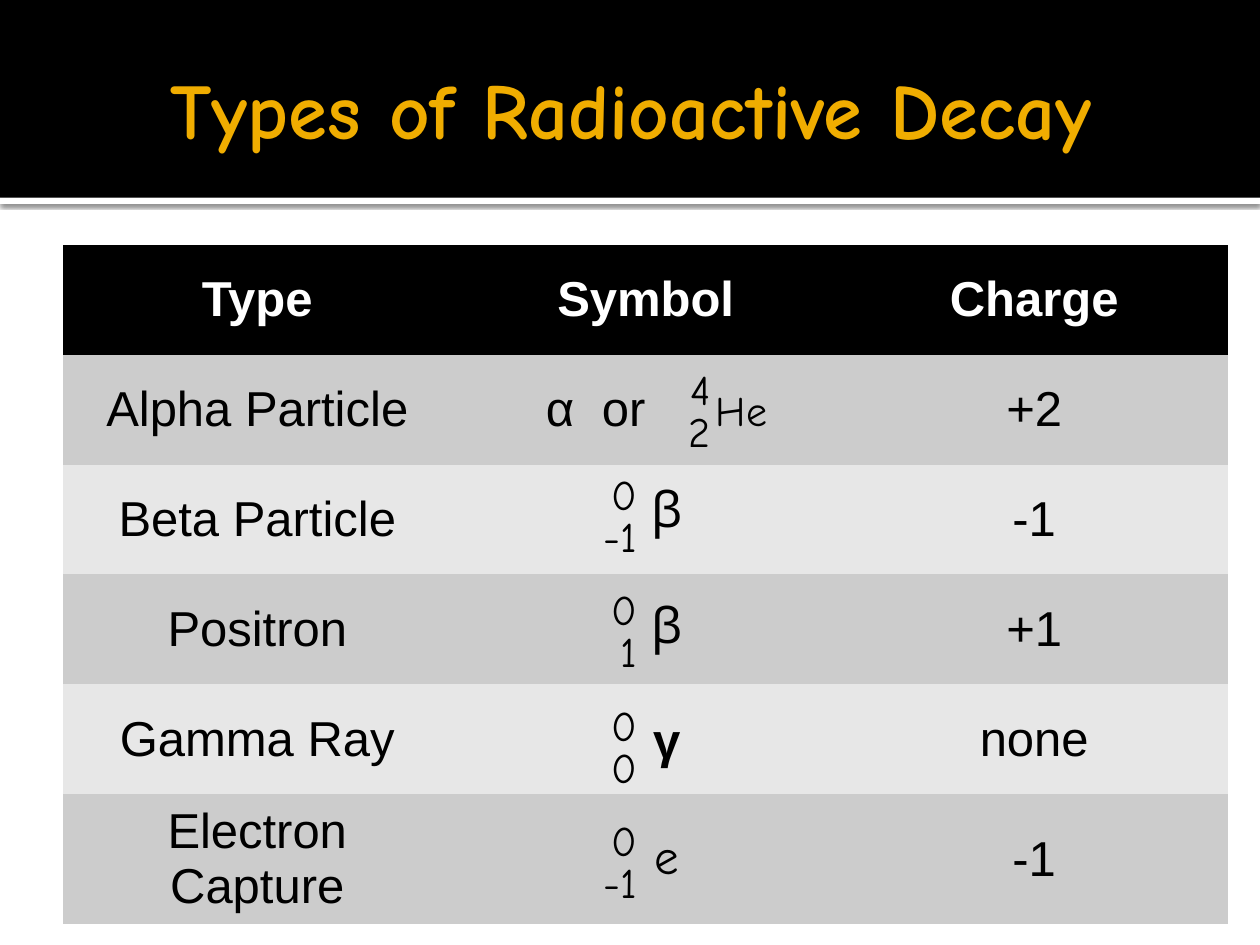
from lxml.etree import SubElement
from pptx import Presentation
from pptx.dml.color import RGBColor
from pptx.enum.shapes import MSO_SHAPE as Shape
from pptx.enum.text import MSO_ANCHOR as Anchor, PP_ALIGN as Align
from pptx.oxml.ns import qn
from pptx.util import Pt

BLACK = RGBColor(0x00, 0x00, 0x00)
WHITE = RGBColor(0xFF, 0xFF, 0xFF)
GOLD = RGBColor(0xF0, 0xAD, 0x00)
GRAY = RGBColor(0xCC, 0xCC, 0xCC)
LIGHT_GRAY = RGBColor(0xE7, 0xE7, 0xE7)

BODY_FONT = "Arial"
HAND_FONT = "Comic Neue"
NO_STYLE_NO_GRID = "{2D5ABB26-0587-4C30-8999-92F81FD0307C}"


def write(frame, text, size, align, font=HAND_FONT, color=BLACK, bold=False):
    frame.word_wrap = True
    para = frame.paragraphs[0]
    para.text = text
    para.alignment = align
    for span in para.runs:
        span.font.name = font
        span.font.size = Pt(size)
        span.font.bold = bold
        span.font.color.rgb = color


def add_text(shapes, left, top, width, height, *style, **options):
    box = shapes.add_textbox(Pt(left), Pt(top), Pt(width), Pt(height))
    write(box.text_frame, *style, **options)
    return box


deck = Presentation()
deck.slide_width, deck.slide_height = Pt(720), Pt(540)
page = deck.slides.add_slide(deck.slide_layouts[6])

# Header band with a shadowed white rule beneath it
bands = []
for top, height, color in [(113, 3.6, WHITE), (0, 113, BLACK)]:
    band = page.shapes.add_shape(Shape.RECTANGLE, 0, Pt(top), Pt(720), Pt(height))
    band.shadow.inherit = False
    band.fill.solid()
    band.fill.fore_color.rgb = color
    band.line.fill.background()
    bands.append(band)

effects = bands[0]._element.spPr.find(qn("a:effectLst"))
shadow = SubElement(effects, qn("a:outerShdw"), blurRad=str(Pt(2.5)),
                    dist=str(Pt(0.8)), dir="5400000", rotWithShape="0")
shadow_color = SubElement(shadow, qn("a:srgbClr"), val=str(BLACK))
SubElement(shadow_color, qn("a:alpha"), val="60000")

title = add_text(page.shapes, 36.5, 12.5, 648, 98.5, "Types of Radioactive Decay",
                 45, Align.CENTER, color=GOLD, bold=True)
title.text_frame.vertical_anchor = Anchor.MIDDLE

# Decay table
rows = [
    ("Type", "Symbol", "Charge"),
    ("Alpha Particle", "α\tor", "+2"),
    ("Beta Particle", "", "-1"),
    ("Positron", "", "+1"),
    ("Gamma Ray", "", "none"),
    ("Electron Capture", "", "-1"),
]
table = page.shapes.add_table(len(rows), 3, Pt(36), Pt(140), Pt(666), Pt(376.5)).table
table._tbl.tblPr.find(qn("a:tableStyleId")).text = NO_STYLE_NO_GRID
for column in table.columns:
    column.width = Pt(222)
for row_number, texts in enumerate(rows):
    table.rows[row_number].height = Pt(62.75)
    header = row_number == 0
    for column_number, text in enumerate(texts):
        cell = table.cell(row_number, column_number)
        cell.vertical_anchor = Anchor.MIDDLE
        cell.fill.solid()
        cell.fill.fore_color.rgb = BLACK if header else GRAY if row_number % 2 else LIGHT_GRAY
        write(cell.text_frame, text, 28, Align.CENTER, font=BODY_FONT,
              color=WHITE if header else BLACK, bold=header)

# "α or" starts at a fixed place, leaving room for the helium symbol
alpha_cell = table.cell(1, 1)
alpha_cell.margin_left = Pt(54)
alpha_para = alpha_cell.text_frame.paragraphs[0]
alpha_para.alignment = Align.LEFT
tabs = SubElement(alpha_para._p.get_or_add_pPr(), qn("a:tabLst"))
SubElement(tabs, qn("a:tab"), pos=str(Pt(32)), algn="l")

# Nuclide symbols: mass number over atomic number, then the particle
helium = page.shapes.add_group_shape().shapes
for text, top in [("4", 204), ("2", 228)]:
    add_text(helium, 376, top, 37, 36.5, text, 24, Align.RIGHT)
add_text(helium, 402, 216, 66, 36.5, "He", 24, Align.LEFT)

particles = [
    ("0", "-1", "β", HAND_FONT),
    ("0", "1", "β", HAND_FONT),
    ("0", "0", "γ", BODY_FONT),
    ("0", "-1", "e", HAND_FONT),
]
for index, (mass, charge, symbol, font) in enumerate(particles):
    top = 264 + 66 * index
    nuclide = page.shapes.add_group_shape().shapes
    for text, offset in [(mass, 0), (charge, 24)]:
        add_text(nuclide, 334, top + offset, 37, 36.5, text, 24, Align.RIGHT)
    add_text(nuclide, 360, top + 6, 42, 41, symbol, 28, Align.CENTER,
             font=font, bold=font == BODY_FONT)

deck.save("out.pptx")
